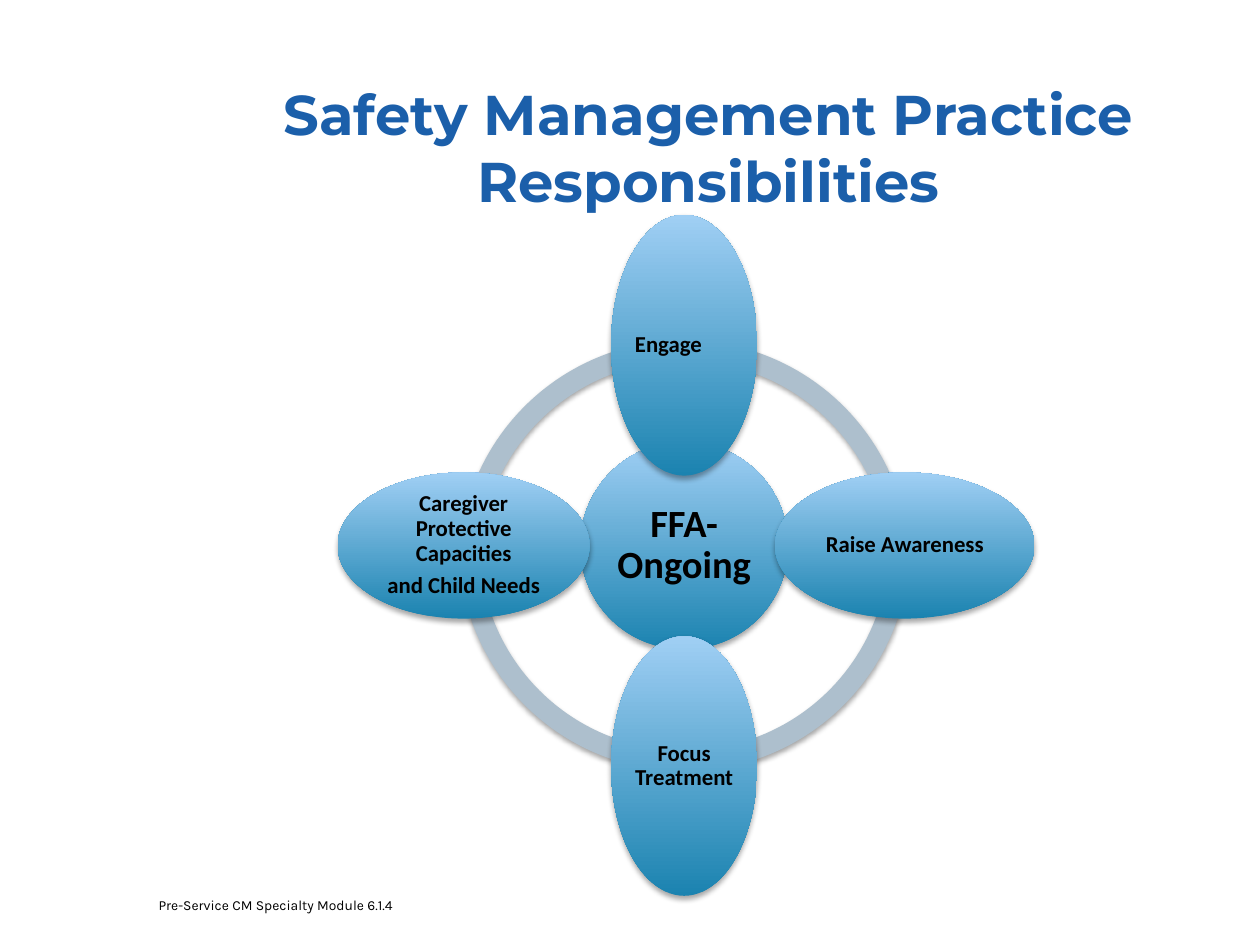
from lxml import etree
from pptx import Presentation
from pptx.dml.color import RGBColor
from pptx.enum.shapes import MSO_SHAPE
from pptx.enum.text import MSO_ANCHOR, PP_ALIGN
from pptx.oxml.ns import qn
from pptx.util import Inches, Pt

COLORS = {"title": "1B5FAA", "text": "000000", "ring": "ADBFCD",
          "deep": "1B83B0", "light": "A0CFF4"}

deck = Presentation()
deck.slide_width, deck.slide_height = Inches(10), Inches(7.5)
column = deck.slide_width / 100
row = deck.slide_height / 75
slide = deck.slides.add_slide(deck.slide_layouts[5])


def add_shadowed(preset, center_x, center_y, width, height):
    """Add a borderless shape, placed by its centre in grid units, with a soft shadow below."""
    shape = slide.shapes.add_shape(
        preset, int((center_x - width / 2) * column), int((center_y - height / 2) * row),
        int(width * column), int(height * row))
    shape.line.fill.background()
    shape.shadow.inherit = False
    effects = shape._element.spPr.find(qn("a:effectLst"))
    shadow = etree.SubElement(effects, qn("a:outerShdw"), blurRad=str(Pt(3.1)),
                              dist=str(Pt(1.8)), dir="5400000", rotWithShape="0")
    tint = etree.SubElement(shadow, qn("a:srgbClr"), val=COLORS["text"])
    etree.SubElement(tint, qn("a:alpha"), val="35000")
    return shape


def style(paragraph, font_name, size, color, bold):
    font = paragraph.font
    font.name, font.size, font.bold = font_name, Pt(size), bold
    font.color.rgb = RGBColor.from_string(COLORS[color])


hub_x, hub_y = 54.3, 43.3

# Ring quarters: start and end angle in degrees, centre height
for start, end, arc_y in [(185.33, 270.24, 44.9), (90, 180, hub_y),
                          (0, 90, hub_y), (269.74, 354.67, 44.9)]:
    arc = add_shadowed(MSO_SHAPE.BLOCK_ARC, hub_x, arc_y, 35.8, 35.8)
    arc.adjustments[0] = start * 0.6
    arc.adjustments[1] = end * 0.6
    arc.adjustments[2] = 0.046
    arc.fill.solid()
    arc.fill.fore_color.rgb = RGBColor.from_string(COLORS["ring"])

# Hub and petals: centre, width, height, text size, paragraphs
ovals = [
    (hub_x, hub_y, 16.5, 16.5, 22, ["FFA-Ongoing"]),
    (hub_x, 27.4, 11.6, 20.7, 13, ["Engage\t"]),
    (71.8, hub_y, 20.6, 11.6, 13, ["Raise Awareness"]),
    (hub_x, 60.8, 11.6, 20.6, 13, ["Focus Treatment"]),
    (36.8, hub_y, 20, 11.6, 13, ["Caregiver Protective Capacities", "and Child Needs"]),
]
for center_x, center_y, width, height, size, lines in ovals:
    oval = add_shadowed(MSO_SHAPE.OVAL, center_x, center_y, width, height)
    oval.fill.gradient()
    oval.fill.gradient_angle = 90
    for stop, shade in zip(oval.fill.gradient_stops, ("deep", "light")):
        stop.color.rgb = RGBColor.from_string(COLORS[shade])
    label = oval.text_frame
    label.word_wrap = True
    label.vertical_anchor = MSO_ANCHOR.MIDDLE
    label.margin_left = label.margin_right = Inches(0.02)
    label.margin_top = label.margin_bottom = Inches(0.02)
    label.text = "\n".join(lines)
    for paragraph in label.paragraphs:
        paragraph.alignment = PP_ALIGN.CENTER
        paragraph.line_spacing = 0.9
        paragraph.space_after = Pt(size * 0.35)
        style(paragraph, "Calibri", size, "text", True)

title = slide.shapes.title
title.left, title.top = int(17.5 * column), int(5.4 * row)
title.width, title.height = int(77.5 * column), int(12.5 * row)
title.text_frame.text = "Safety Management Practice Responsibilities"
title.text_frame.vertical_anchor = MSO_ANCHOR.MIDDLE
heading = title.text_frame.paragraphs[0]
heading.alignment = PP_ALIGN.CENTER
style(heading, "Montserrat", 32, "title", True)

module = slide.shapes.add_textbox(int(11.6 * column), int(70.7 * row),
                                  int(22.5 * column), int(2.5 * row)).text_frame
module.word_wrap = True
module.text = "Pre-Service CM Specialty Module 6.1.4"
style(module.paragraphs[0], "Karla", 7.9, "text", False)

deck.save("out.pptx")
